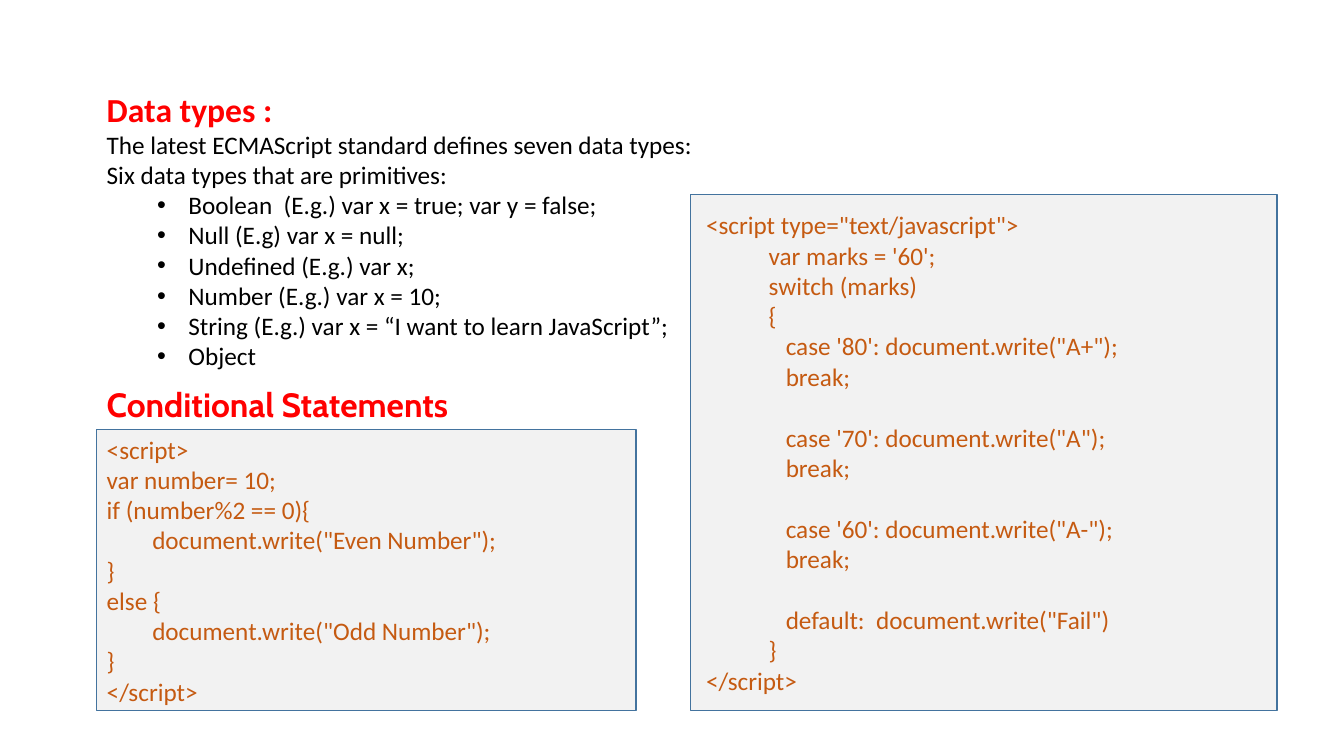
"""Build a slide on JavaScript data types and conditional statements."""
from lxml import etree
from pptx import Presentation
from pptx.dml.color import RGBColor
from pptx.enum.shapes import MSO_SHAPE
from pptx.enum.text import MSO_ANCHOR, PP_ALIGN
from pptx.oxml.ns import qn
from pptx.util import Cm, Pt

RECT = MSO_SHAPE.RECTANGLE
TOP, MIDDLE = MSO_ANCHOR.TOP, MSO_ANCHOR.MIDDLE
LEFT = PP_ALIGN.LEFT

RED, BLACK, ORANGE = "FF0000", "000000", "C55A11"
PANEL, BORDER = "F2F2F2", "43739E"
SPACE_CM = 0.1435
LINE_PT = 22

TYPES_TITLE = "Data types :"
TYPES_INTRO = [
    "The latest ECMAScript standard defines seven data types:",
    "Six data types that are primitives:",
]
TYPES = [
    "Boolean  (E.g.) var x = true; var y = false;",
    "Null (E.g) var x = null;",
    "Undefined (E.g.) var x;",
    "Number (E.g.) var x = 10;",
    "String (E.g.) var x = “I want to learn JavaScript”;",
    "Object",
]
COND_TITLE = "Conditional Statements"

# (indent in characters, code, blank line before)
IF_CODE = [
    (0, "<script>", False),
    (0, "var number= 10;", False),
    (0, "if (number%2 == 0){", False),
    (8, 'document.write("Even Number");', False),
    (0, "}", False),
    (0, "else {", False),
    (8, 'document.write("Odd Number");', False),
    (0, "}", False),
    (0, "</script>", False),
]
SWITCH_CODE = [
    (1, '<script type="text/javascript">', False),
    (12, "var marks = '60';", False),
    (12, "switch (marks)", False),
    (12, "{", False),
    (15, "case '80': document.write(\"A+\");", False),
    (15, "break;", False),
    (15, "case '70': document.write(\"A\");", True),
    (15, "break;", False),
    (15, "case '60': document.write(\"A-\");", True),
    (15, "break;", False),
    (15, 'default:  document.write("Fail")', True),
    (12, "}", False),
    (1, "</script>", False),
]
TYPES_BOX = (2.44, 2.11, 26.54, 7.44)
COND_BOX = (2.44, 9.55, 9.93, 1.27)
PANELS = [
    ((2.44, 10.82, 13.59, 7.09), IF_CODE),
    ((17.4, 4.9, 14.78, 13.0), SWITCH_CODE),
]


def rgb(value):
    return RGBColor.from_string(value)


def format_text(p, color, size=18, font="Calibri", bold=False):
    p.alignment = LEFT
    for r in p.runs:
        r.font.size, r.font.name, r.font.bold = Pt(size), font, bold
        r.font.color.rgb = rgb(color)


def indent(p, margin, first=0):
    pPr = p._p.get_or_add_pPr()
    pPr.set("marL", str(Cm(margin)))
    pPr.set("indent", str(Cm(first)))
    return pPr


def add_bullet(p):
    p.level = 1
    pPr = indent(p, 2.06, -0.79)
    etree.SubElement(pPr, qn("a:buFont"), typeface="Arial")
    etree.SubElement(pPr, qn("a:buChar"), char="•")


def add_text(s, box, lines, wrap=True):
    tf = s.shapes.add_textbox(*map(Cm, box)).text_frame
    tf.word_wrap = wrap
    tf.vertical_anchor = TOP
    tf.text = "\n".join(lines)
    return tf.paragraphs


def add_panel(s, box, code):
    sp = s.shapes.add_shape(RECT, *map(Cm, box))
    sp.shadow.inherit = False
    sp.fill.solid()
    sp.fill.fore_color.rgb = rgb(PANEL)
    sp.line.color.rgb = rgb(BORDER)
    sp.line.width = Pt(1)
    tf = sp.text_frame
    tf.word_wrap = True
    tf.vertical_anchor = MIDDLE
    tf.text = "\n".join(text for _, text, _ in code)
    for p, (chars, _, gap) in zip(tf.paragraphs, code):
        format_text(p, ORANGE)
        indent(p, chars * SPACE_CM)
        if gap:
            p.space_before = Pt(LINE_PT)


def main():
    prs = Presentation()
    prs.slide_width, prs.slide_height = Cm(33.87), Cm(19.05)
    s = prs.slides.add_slide(prs.slide_layouts[6])

    title, *body = add_text(s, TYPES_BOX, [TYPES_TITLE, *TYPES_INTRO, *TYPES])
    format_text(title, RED, 24, bold=True)
    for p in body:
        format_text(p, BLACK)
    for p in body[len(TYPES_INTRO):]:
        add_bullet(p)

    heading = add_text(s, COND_BOX, [COND_TITLE], wrap=False)[0]
    format_text(heading, RED, 24, "Cabin", True)

    for box, code in PANELS:
        add_panel(s, box, code)
    prs.save("out.pptx")


if __name__ == "__main__":
    main()
